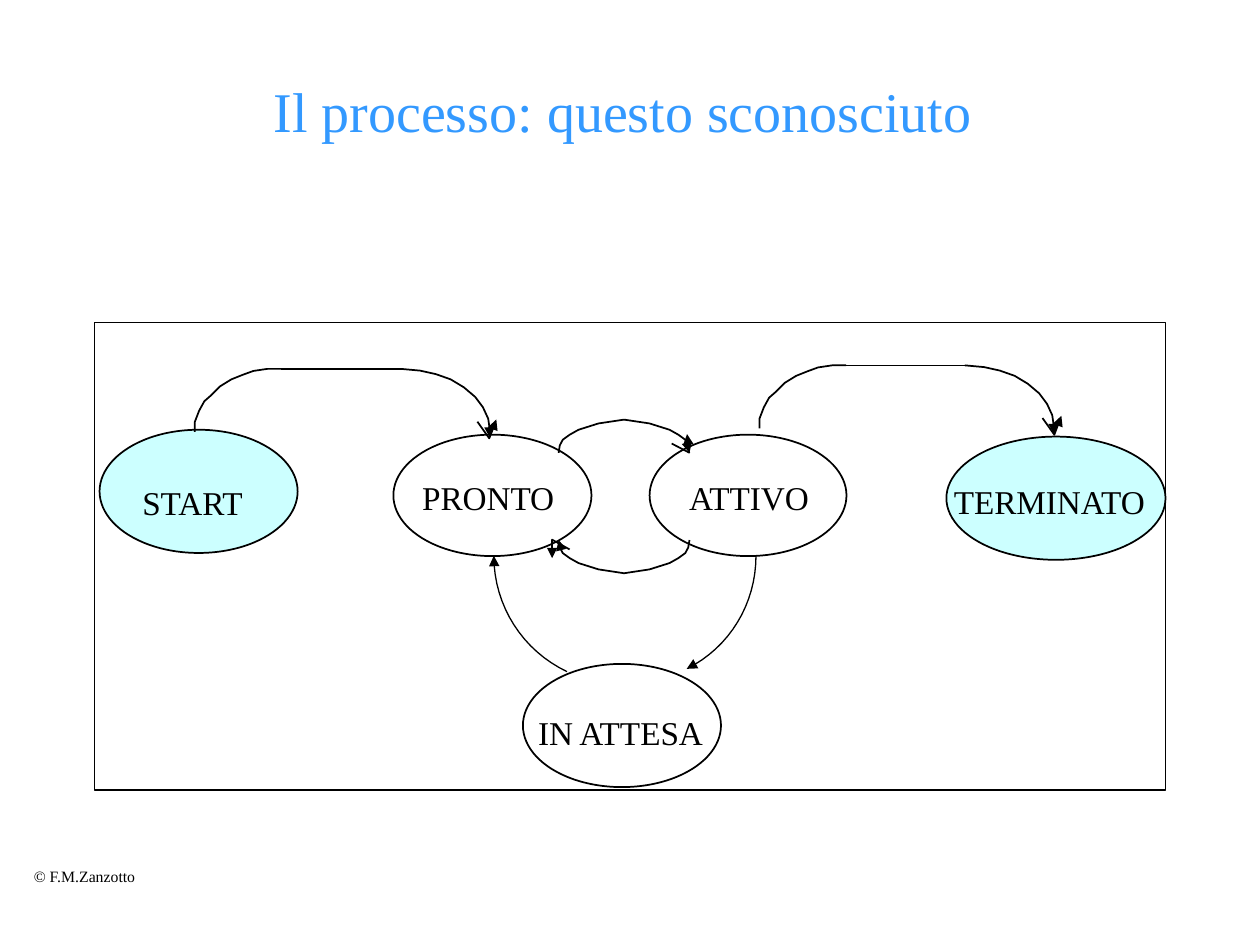
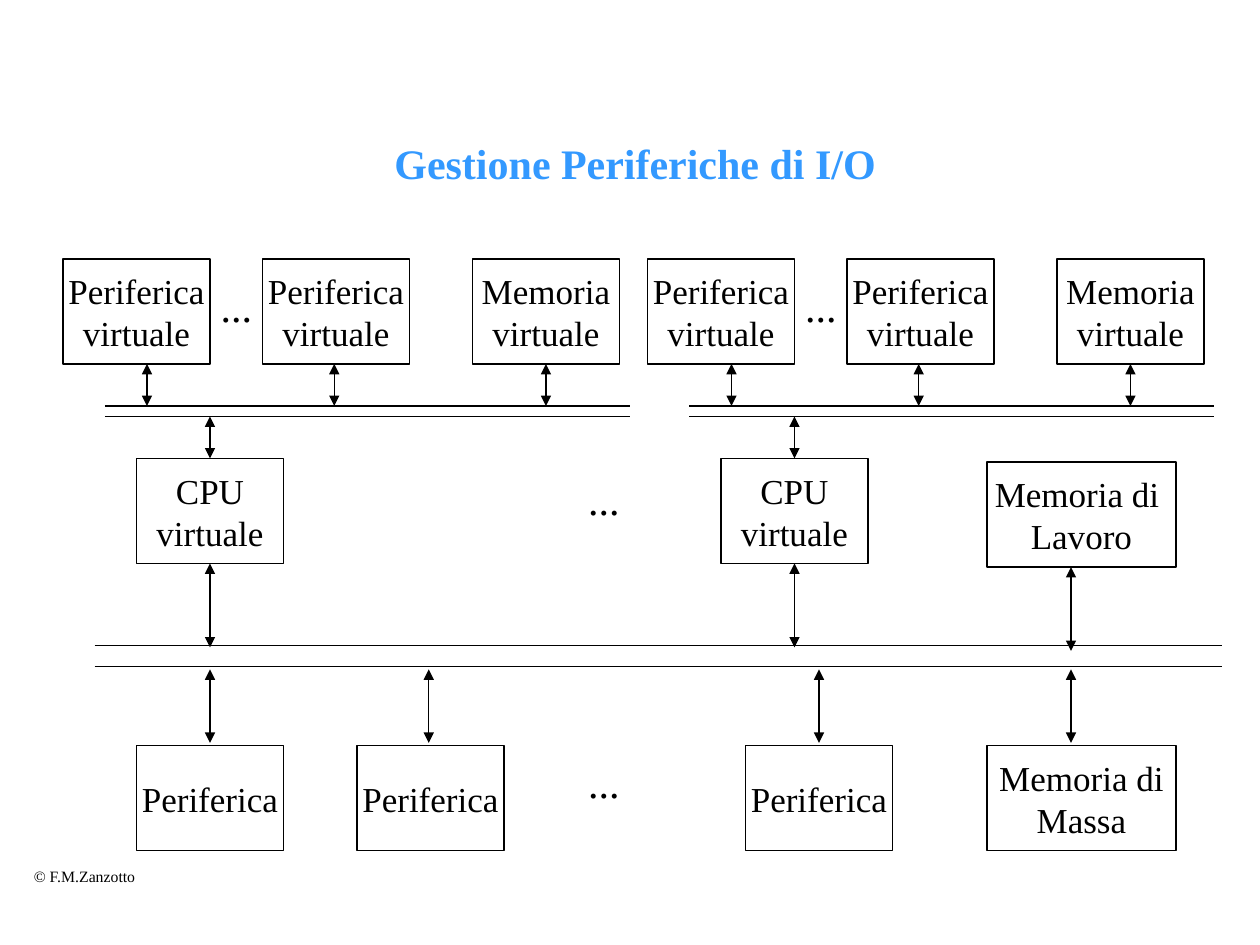
from dataclasses import dataclass

from lxml import etree
from pptx import Presentation
from pptx.dml.color import RGBColor
from pptx.enum.shapes import MSO_CONNECTOR as Connector, MSO_SHAPE as Preset
from pptx.enum.text import MSO_ANCHOR as Anchor, MSO_AUTO_SIZE as AutoSize, PP_ALIGN as Align
from pptx.oxml.ns import qn
from pptx.util import Pt


@dataclass(frozen=True)
class Theme:
    font: str = "Times New Roman"
    ink: RGBColor = RGBColor(0x00, 0x00, 0x00)
    title: RGBColor = RGBColor(0x33, 0x99, 0xFF)
    endpoint: RGBColor = RGBColor(0xCC, 0xFF, 0xFF)
    title_size: float = 32
    subtitle_size: float = 24
    dots_size: float = 24
    box_size: float = 20
    state_size: float = 19
    footer_size: float = 9
    thin: float = 0.75
    medium: float = 1


class Deck:
    def __init__(self, theme):
        self.theme = theme
        self.presentation = Presentation()
        self.presentation.slide_width = Pt(720)
        self.presentation.slide_height = Pt(540)
        self.slide = None

    def new_slide(self, title, bounds, size, bold=False):
        self.slide = self.presentation.slides.add_slide(self.presentation.slide_layouts[5])
        shape = self.slide.shapes.title
        shape.left, shape.top, shape.width, shape.height = map(Pt, bounds)
        self.set_text(shape.text_frame, [title], size, Align.CENTER, self.theme.title, bold)
        shape.text_frame.vertical_anchor = Anchor.MIDDLE
        self.label("© F.M.Zanzotto", (12.24, 491.76, 73.44, 18), self.theme.footer_size, 7.2, 3.6)

    def set_text(self, frame, lines, size, align=Align.LEFT, color=None, bold=False):
        frame.text = "\n".join(lines)
        for paragraph in frame.paragraphs:
            paragraph.alignment = align
            font = paragraph.font
            font.name, font.size, font.bold = self.theme.font, Pt(size), bold
            font.color.rgb = color or self.theme.ink

    def label(self, text, bounds, size, inset_x=0, inset_y=0):
        frame = self.slide.shapes.add_textbox(*map(Pt, bounds)).text_frame
        frame.word_wrap = False
        frame.auto_size = AutoSize.SHAPE_TO_FIT_TEXT
        frame.margin_left = frame.margin_right = Pt(inset_x)
        frame.margin_top = frame.margin_bottom = Pt(inset_y)
        self.set_text(frame, [text], size)

    def dots(self, left, top):
        self.label("...", (left, top, 32.4, 36), self.theme.dots_size, 7.2, 3.6)

    def outline(self, shape, width, arrows=()):
        shape.line.color.rgb = self.theme.ink
        shape.line.width = Pt(width)
        line = shape.element.spPr.find(qn("a:ln"))
        for end in arrows:
            etree.SubElement(line, qn(f"a:{end}"), type="triangle")

    def shape(self, preset, bounds, width, fill=None):
        shape = self.slide.shapes.add_shape(preset, *map(Pt, bounds))
        shape.shadow.inherit = False
        if fill:
            shape.fill.solid()
            shape.fill.fore_color.rgb = fill
        else:
            shape.fill.background()
        self.outline(shape, width)
        return shape

    def box(self, lines, left, top, width=84):
        shape = self.shape(Preset.RECTANGLE, (left, top, width, 60), self.theme.thin)
        frame = shape.text_frame
        frame.word_wrap = False
        frame.vertical_anchor = Anchor.MIDDLE
        self.set_text(frame, lines, self.theme.box_size, Align.CENTER)
        return shape

    def line(self, start, end, width, arrows=()):
        connector = self.slide.shapes.add_connector(Connector.STRAIGHT, *map(Pt, (*start, *end)))
        self.outline(connector, width, arrows)
        etree.SubElement(connector.element.spPr, qn("a:effectLst"))
        return connector

    def double_arrow(self, x, top, bottom, above=None, below=None):
        connector = self.line((x, top), (x, bottom), self.theme.thin, ("headEnd", "tailEnd"))
        if above:
            connector.begin_connect(above, 2)
        if below:
            connector.end_connect(below, 0)

    def bus(self, left, right, *heights):
        for y in heights:
            self.line((left, y), (right, y), self.theme.thin)

    def curve(self, origin, offsets, width, arrow=False, flip_x=1, flip_y=1):
        points = [(Pt(origin[0] + flip_x * x), Pt(origin[1] + flip_y * y)) for x, y in offsets]
        builder = self.slide.shapes.build_freeform(*points[0], scale=1)
        builder.add_line_segments(points[1:], close=False)
        shape = builder.convert_to_shape()
        shape.shadow.inherit = False
        shape.fill.background()
        self.outline(shape, width, ("tailEnd",) if arrow else ())


def bezier(start, first, second, end, steps=16):
    points = []
    for step in range(steps + 1):
        t = step / steps
        weights = ((1 - t) ** 3, 3 * t * (1 - t) ** 2, 3 * t * t * (1 - t), t ** 3)
        points.append(tuple(
            sum(weight * point[axis] for weight, point in zip(weights, (start, first, second, end)))
            for axis in (0, 1)))
    return points


ARCH_RISE = [(0, 0), (-8, 0), (-16, 1.2), (-22, 3.4), (-28.5, 6), (-35, 10), (-40, 15),
             (-44, 18.5), (-47, 24), (-49.5, 30.5), (-49.5, 36)]
ARCH_FALL = [(0, 0), (11, 1), (20, 3), (28.5, 6), (36, 10.5), (42.5, 16), (47, 22),
             (50, 28.5), (51, 35.5), (51, 39.3)]
LOOP_QUARTER = [(0, 0), (14.6, 2.2), (26, 5.8), (31, 8.6), (35, 11.5), (36.7, 14.7), (37.4, 19)]


def process_states(deck):
    theme = deck.theme
    deck.new_slide("Il processo: questo sconosciuto ", (54, 36, 612, 54), theme.title_size)
    deck.shape(Preset.RECTANGLE, (54, 184.32, 612, 267.12), theme.thin)

    states = [
        ("START", (56.88, 245.6, 113.2, 70.4), theme.endpoint, (81.36, 275.76, 67.7, 25.2)),
        ("IN ATTESA", (298.8, 379.4, 113.2, 70.4), None, (307.44, 406.8, 101.5, 25.2)),
        ("TERMINATO", (540.8, 249.5, 125.2, 70.4), theme.endpoint, (545.04, 275.04, 115.2, 25.2)),
        ("ATTIVO", (371.2, 248.4, 112.5, 69.4), None, (393.84, 272.88, 76.3, 25.2)),
        ("PRONTO", (224.8, 248.4, 113.2, 69.4), None, (241.2, 272.88, 82.8, 25.2)),
    ]
    for name, ellipse, fill, text in states:
        deck.shape(Preset.OVAL, ellipse, theme.medium, fill)
        deck.label(name, text, theme.state_size)

    for rise_x, fall_x, y in ((160.8, 229, 210.8), (483.5, 551.3, 208.8)):
        deck.curve((rise_x, y), ARCH_RISE, theme.medium)
        deck.line((rise_x, y), (fall_x, y), theme.medium)
        deck.curve((fall_x, y), ARCH_FALL, theme.medium, arrow=True)

    for y, flip_y, arrow_side in ((239.8, 1, 1), (327.6, -1, -1)):
        for flip_x in (-1, 1):
            deck.curve((356.6, y), LOOP_QUARTER, theme.medium, flip_x == arrow_side, flip_x, flip_y)

    chevrons = [
        ((279.6, 250.5), (-6.8, -9.5), (4, -10.8)),
        ((602.5, 248.4), (-6.8, -9.5), (4, -10.8)),
        ((315.5, 308.4), (10, 5.6), (0, 10.6)),
        ((393.8, 258.7), (-10, -5.2), (-1.2, -10.6)),
    ]
    for tip, first, last in chevrons:
        deck.curve(tip, [first, (0, 0), last], theme.medium, arrow=True)

    waiting_arcs = [
        bezier((432, 317.6), (432, 345), (417, 370), (392.4, 382.2)),
        bezier((324, 383.8), (299, 372), (282.2, 346.5), (282.2, 317.6)),
    ]
    for points in waiting_arcs:
        deck.curve((0, 0), points, theme.thin, arrow=True)


def virtual_machine(deck, offset):
    peripheral, memory = ["Periferica", "virtuale"], ["Memoria", "virtuale"]
    deck.box(peripheral, offset + 36, 148)
    deck.box(peripheral, offset + 150, 148)
    memory_box = deck.box(memory, offset + 270, 148)
    cpu = deck.box(["CPU", "virtuale"], offset + 78, 262)
    deck.bus(offset + 60, offset + 360, 232, 238)
    for x, above in ((84, None), (191, None), (312, memory_box)):
        deck.double_arrow(offset + x, 208, 232, above=above)
    deck.double_arrow(offset + 120, 238, 262, below=cpu)
    deck.double_arrow(offset + 120, 322, 370, above=cpu)
    deck.dots(offset + 119, 157)


def device_management(deck):
    deck.new_slide("Gestione Periferiche di I/O", (39, 48, 648, 90), deck.theme.subtitle_size, bold=True)
    deck.bus(54, 698.5, 369, 381)
    for left in (78, 204, 426):
        deck.box(["Periferica"], left, 426)
    deck.box(["Memoria di ", "Lavoro"], 564, 264, 108)
    deck.box(["Memoria di", "Massa"], 564, 426, 108)
    deck.double_arrow(612, 324, 372)
    for x in (120, 245, 468, 612):
        deck.double_arrow(x, 382.5, 424.5)
    for offset in (0, 334):
        virtual_machine(deck, offset)
    for top in (267, 429):
        deck.dots(329, top)


def main():
    deck = Deck(Theme())
    process_states(deck)
    device_management(deck)
    deck.presentation.save("out.pptx")


if __name__ == "__main__":
    main()
